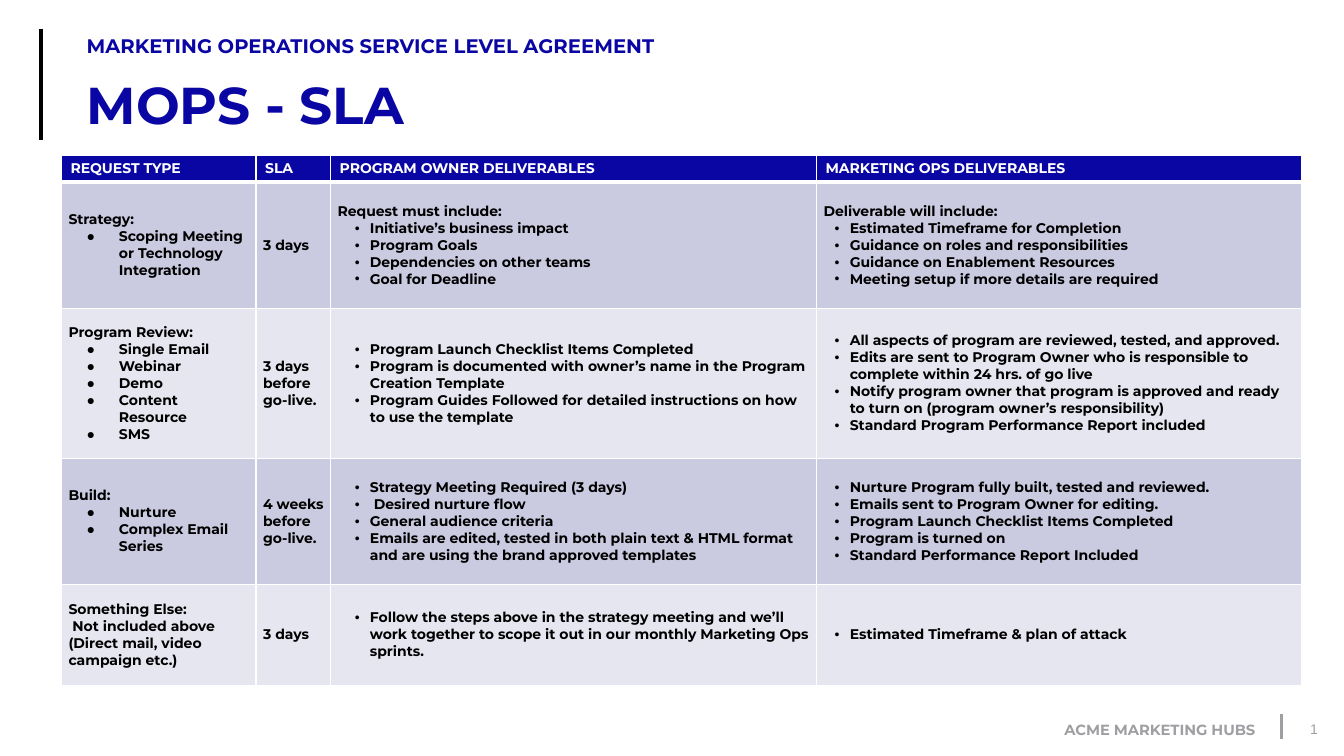
from lxml import etree
from pptx import Presentation
from pptx.dml.color import RGBColor
from pptx.enum.shapes import MSO_CONNECTOR
from pptx.enum.text import MSO_ANCHOR, PP_ALIGN
from pptx.oxml.ns import qn
from pptx.util import Inches, Pt

STRAIGHT = MSO_CONNECTOR.STRAIGHT
TOP, MIDDLE = MSO_ANCHOR.TOP, MSO_ANCHOR.MIDDLE
LEFT, RIGHT = PP_ALIGN.LEFT, PP_ALIGN.RIGHT

BLUE, GREY, BLACK, WHITE = "0A06A4", "9F9FA3", "000000", "FFFFFF"
BANDS = ["CACAE0", "E6E6F0"]

COLUMN_WIDTHS = [1.93, 0.74, 4.82, 4.81]
ROW_HEIGHTS = [0.25, 1.25, 1.49, 1.25, 1]
HEADERS = ["REQUEST TYPE", "SLA", "PROGRAM OWNER DELIVERABLES", "MARKETING OPS DELIVERABLES"]
# Bullet character, left margin and hanging indent for each column
BULLETS = [("●", 0.5, -0.32), None, ("•", 0.32, -0.15), ("•", 0.26, -0.15)]

# Each cell holds its plain lines, then its bulleted lines
SERVICES = [
    [
        (["Strategy:"], ["Scoping Meeting or Technology Integration"]),
        (["3 days"], []),
        (["Request must include:"],
         ["Initiative’s business impact", "Program Goals",
          "Dependencies on other teams", "Goal for Deadline"]),
        (["Deliverable will include:"],
         ["Estimated Timeframe for Completion", "Guidance on roles and responsibilities",
          "Guidance on Enablement Resources", "Meeting setup if more details are required"]),
    ],
    [
        (["Program Review:"], ["Single Email", "Webinar", "Demo", "Content Resource", "SMS"]),
        (["3 days before go-live."], []),
        ([], ["Program Launch Checklist Items Completed",
              "Program is documented with owner’s name in the Program Creation Template",
              "Program Guides Followed for detailed instructions on how to use the template"]),
        ([], ["All aspects of program are reviewed, tested, and approved.",
              "Edits are sent to Program Owner who is responsible to complete within 24 hrs. of go live",
              "Notify program owner that program is approved and ready to turn on "
              "(program owner’s responsibility)",
              "Standard Program Performance Report included"]),
    ],
    [
        (["Build:"], ["Nurture", "Complex Email Series"]),
        (["4 weeks before go-live."], []),
        ([], ["Strategy Meeting Required (3 days)", " Desired nurture flow",
              "General audience criteria",
              "Emails are edited, tested in both plain text & HTML format "
              "and are using the brand approved templates"]),
        ([], ["Nurture Program fully built, tested and reviewed.",
              "Emails sent to Program Owner for editing.",
              "Program Launch Checklist Items Completed", "Program is turned on",
              "Standard Performance Report Included"]),
    ],
    [
        (["Something Else:", " Not included above", "(Direct mail, video campaign etc.)"], []),
        (["3 days"], []),
        ([], ["Follow the steps above in the strategy meeting and we’ll work together "
              "to scope it out in our monthly Marketing Ops sprints."]),
        ([], ["Estimated Timeframe & plan of attack"]),
    ],
]


def color(value):
    return RGBColor.from_string(value)


def format_font(font, size, fill, bold=True, name="Montserrat"):
    for key, value in {"name": name, "size": Pt(size), "bold": bold}.items():
        setattr(font, key, value)
    font.color.rgb = color(fill)


def set_margins(target, horizontal, vertical):
    margins = {"left": horizontal, "right": horizontal, "top": vertical, "bottom": vertical}
    for side, value in margins.items():
        setattr(target, f"margin_{side}", Inches(value))


def set_indent(paragraph, margin, indent):
    properties = paragraph._p.get_or_add_pPr()
    properties.set("marL", str(Inches(margin)))
    properties.set("indent", str(Inches(indent)))
    return properties


def add_bullet(paragraph, character, margin, indent):
    properties = set_indent(paragraph, margin, indent)
    bullet_color = etree.SubElement(properties, qn("a:buClr"))
    etree.SubElement(bullet_color, qn("a:srgbClr"), val=BLACK)
    etree.SubElement(properties, qn("a:buFont"), typeface="Arial")
    etree.SubElement(properties, qn("a:buChar"), char=character)


def add_label(slide, box, text, size, fill, align=LEFT, anchor=MIDDLE, margins=(0, 0), **font):
    shape = slide.shapes.add_textbox(*map(Inches, box))
    frame = shape.text_frame
    frame.word_wrap = True
    frame.vertical_anchor = anchor
    set_margins(frame, *margins)
    paragraph = frame.paragraphs[0]
    paragraph.text = text
    paragraph.alignment = align
    format_font(paragraph.runs[0].font, size, fill, **font)
    return paragraph


def add_rule(slide, left, top, height, fill, width):
    ends = [Inches(value) for value in (left, top, left, top + height)]
    rule = slide.shapes.add_connector(STRAIGHT, *ends)
    rule.line.color.rgb = color(fill)
    rule.line.width = Pt(width)
    etree.SubElement(rule._element.spPr, qn("a:effectLst"))


def add_heading(slide, left, top, width):
    add_rule(slide, left, top, 1.1, BLACK, 3)
    text_left, text_width = left + 0.2, width - 0.2
    subtitle = add_label(slide, (text_left, top + 0.04, text_width, 0.24),
                         "MARKETING OPERATIONS SERVICE LEVEL AGREEMENT", 14, BLUE)
    title = add_label(slide, (text_left, top + 0.43, text_width, 0.67),
                      "MOPS - SLA", 37, BLUE, anchor=TOP)
    for paragraph in (subtitle, title):
        set_indent(paragraph, 0.5, -0.25)


def style_cell(cell, fill, margins, top, bottom):
    properties = cell._tc.get_or_add_tcPr()
    for side, width in {"L": 1, "R": 1, "T": top, "B": bottom}.items():
        border = etree.SubElement(properties, qn(f"a:ln{side}"), w=str(Pt(width)))
        border_fill = etree.SubElement(border, qn("a:solidFill"))
        etree.SubElement(border_fill, qn("a:srgbClr"), val=WHITE)
    cell.fill.solid()
    cell.fill.fore_color.rgb = color(fill)
    cell.vertical_anchor = MIDDLE
    set_margins(cell, *margins)


def fill_cell(cell, plain, bulleted, bullet, text_color):
    frame = cell.text_frame
    for index, line in enumerate(plain + bulleted):
        paragraph = frame.add_paragraph() if index else frame.paragraphs[0]
        if index >= len(plain):
            add_bullet(paragraph, *bullet)
        paragraph.text = line
        format_font(paragraph.runs[0].font, 10, text_color)


def add_service_table(slide, left, top):
    box = (left, top, sum(COLUMN_WIDTHS), sum(ROW_HEIGHTS))
    shape = slide.shapes.add_table(len(ROW_HEIGHTS), len(COLUMN_WIDTHS), *map(Inches, box))
    table = shape.table
    for column, width in zip(table.columns, COLUMN_WIDTHS):
        column.width = Inches(width)
    for row, height in zip(table.rows, ROW_HEIGHTS):
        row.height = Inches(height)
    # Header row
    for cell, header in zip(table.rows[0].cells, HEADERS):
        style_cell(cell, BLUE, (0.09, 0.05), 1, 3)
        fill_cell(cell, [header], [], None, WHITE)
    # Banded service rows
    for index, service in enumerate(SERVICES):
        cells = table.rows[index + 1].cells
        for cell, (plain, bulleted), bullet in zip(cells, service, BULLETS):
            style_cell(cell, BANDS[index % 2], (0.07, 0.07), 1 if index else 3, 1)
            fill_cell(cell, plain, bulleted, bullet, BLACK)


def add_footer(slide, left, top, width):
    options = {"align": RIGHT, "margins": (0.1, 0.05)}
    add_label(slide, (left, top + 0.01, width - 0.62, 0.29),
              "ACME MARKETING HUBS", 10.5, GREY, **options)
    add_rule(slide, left + width - 0.46, top, 0.25, GREY, 1.5)
    add_label(slide, (left + width - 3.17, top + 0.02, 3.17, 0.27),
              "1", 10, GREY, bold=False, name="Arial", **options)


def main():
    presentation = Presentation()
    presentation.slide_width = Inches(13.33)
    presentation.slide_height = Inches(7.5)
    slide = presentation.slides.add_slide(presentation.slide_layouts[6])
    add_heading(slide, 0.41, 0.29, 12.5)
    add_service_table(slide, 0.61, 1.54)
    add_footer(slide, 6.1, 7.08, 7.07)
    presentation.save("out.pptx")


if __name__ == "__main__":
    main()
